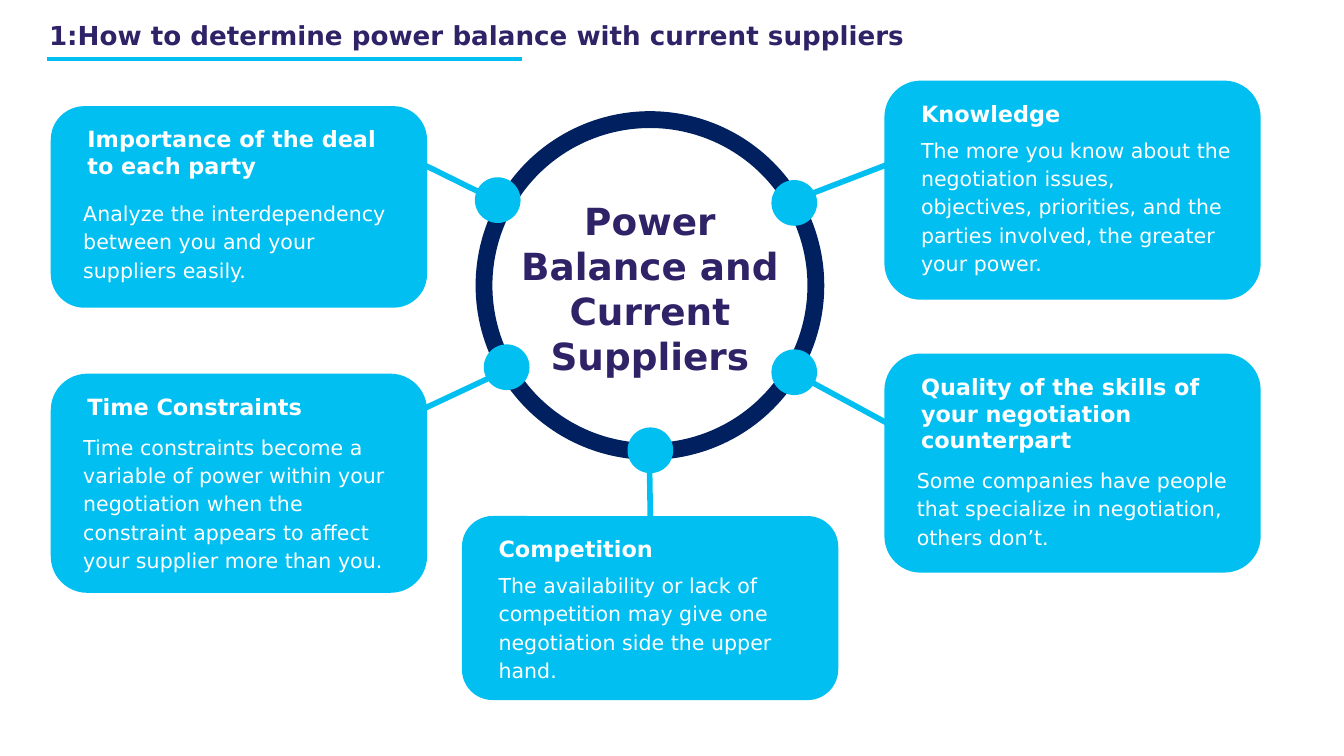
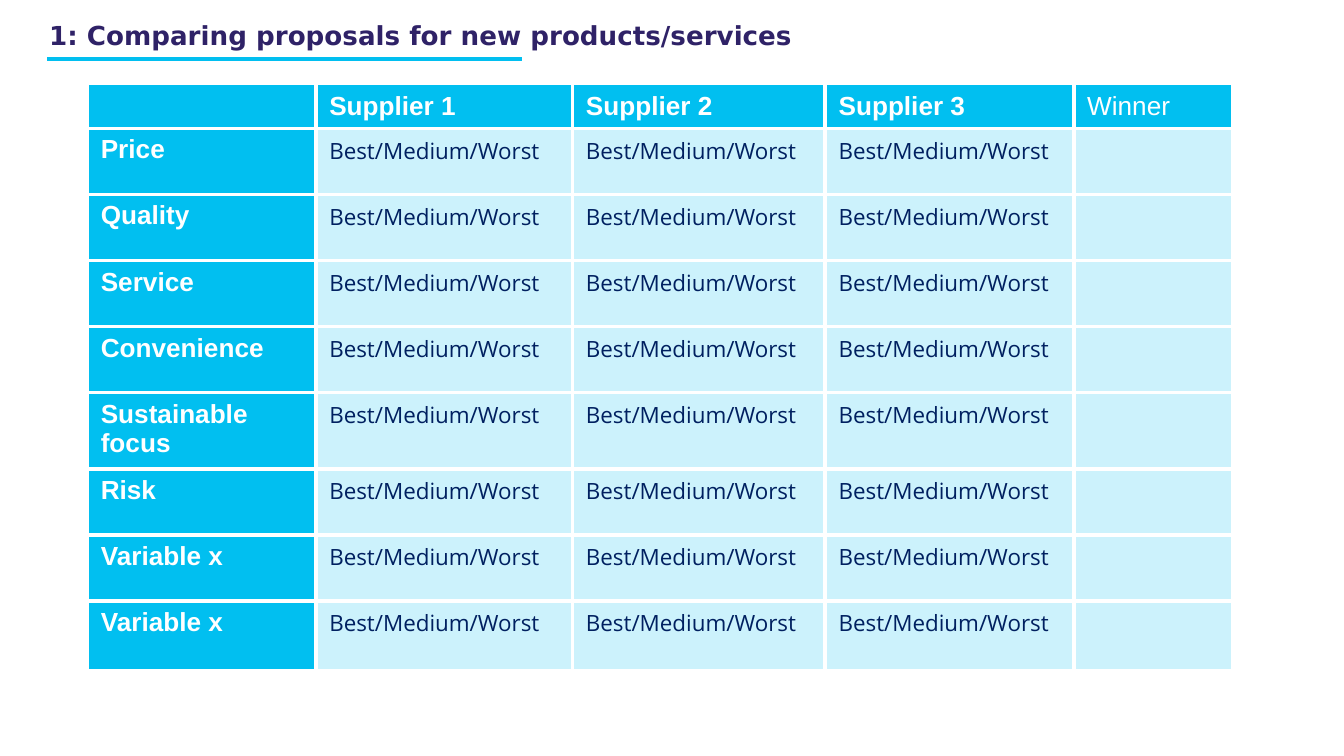
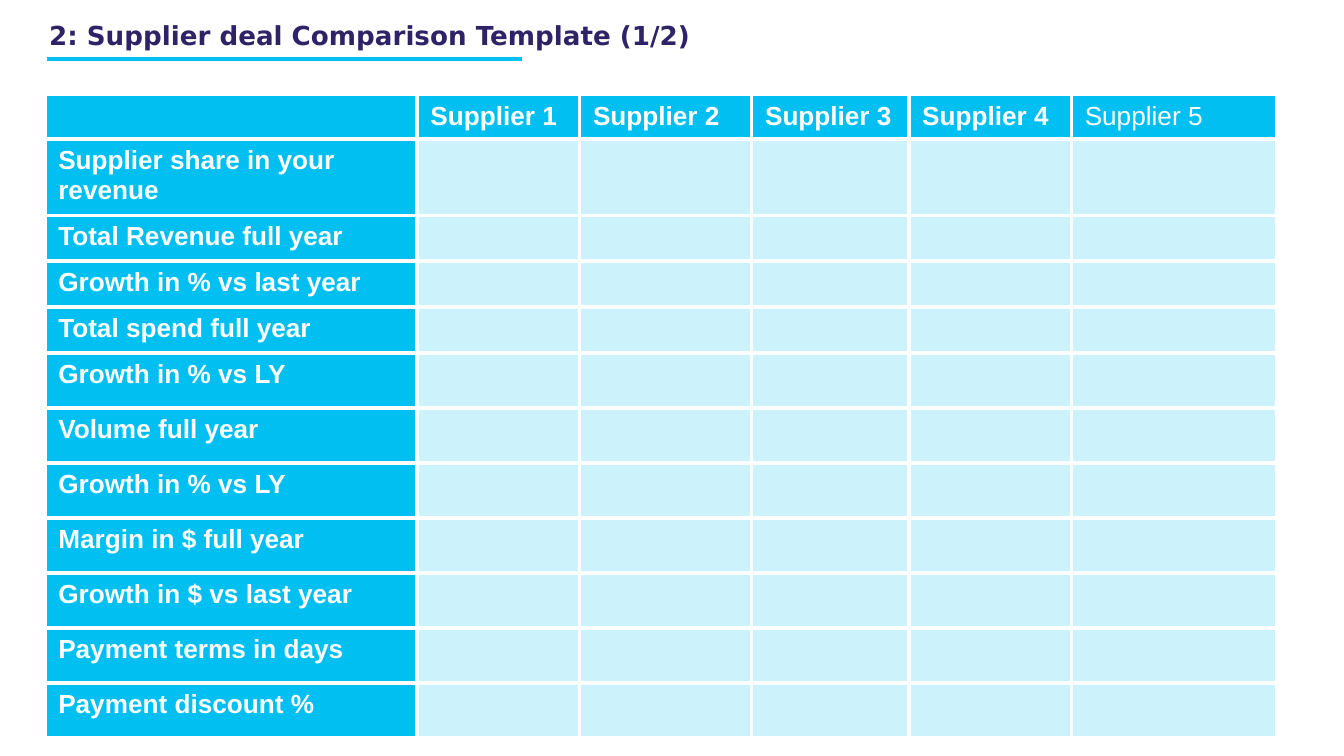
from lxml import etree
from pptx import Presentation
from pptx.dml.color import RGBColor
from pptx.enum.shapes import MSO_CONNECTOR, MSO_SHAPE
from pptx.enum.text import MSO_ANCHOR, MSO_AUTO_SIZE, PP_ALIGN
from pptx.oxml.ns import qn
from pptx.util import Pt

OVAL, ROUND = MSO_SHAPE.OVAL, MSO_SHAPE.ROUNDED_RECTANGLE
STRAIGHT = MSO_CONNECTOR.STRAIGHT
MIDDLE, TOP = MSO_ANCHOR.MIDDLE, MSO_ANCHOR.TOP
LEFT, CENTER = PP_ALIGN.LEFT, PP_ALIGN.CENTER
GROW = MSO_AUTO_SIZE.SHAPE_TO_FIT_TEXT

COLORS = {"cyan": "01BFF0", "pale": "CCF2FC", "navy": "002060",
          "plum": "2F2267", "white": "FFFFFF"}
MAIN, HEAD, CELL = "DejaVu Sans", "Arial", "Open Sans"
BOX_W, DOT = 201.6, 24.5
RATING = "Best/Medium/Worst"

TOPICS = [
    {"head": "Knowledge",
     "body": "The more you know about the negotiation issues, objectives, "
             "priorities, and the parties involved, the greater your power.",
     "box": (473.8, 43.2, 117.4), "sizes": (20, 80), "text": (14.2, 25.9),
     "dot": (413.3, 96.5), "line": (421.9, 108.7, 481.7, 85.7)},
    {"head": "Quality of the skills of your negotiation counterpart",
     "body": "Some companies have people that specialize in negotiation, others don’t.",
     "box": (473.8, 189.4, 117.4), "sizes": (49, 50), "text": (12, 56.8),
     "dot": (413.3, 187.2), "line": (427.7, 200.9, 479.5, 229)},
    {"head": "Competition",
     "body": "The availability or lack of competition may give one "
             "negotiation side the upper hand.",
     "box": (247.5, 276.5, 98.6), "sizes": (20, 65), "text": (14.2, 25.9),
     "dot": (336.2, 229), "line": (347.8, 239, 348.5, 283.7)},
    {"head": "Time Constraints",
     "body": "Time constraints become a variable of power within your negotiation "
             "when the constraint appears to affect your supplier more than you.",
     "box": (27.2, 200.2, 117.4), "sizes": (20, 80), "text": (12, 28),
     "dot": (259.2, 184.5), "line": (279.4, 194.4, 208.8, 227.5)},
    {"head": "Importance of the deal to each party",
     "body": "Analyze the interdependency between you and your suppliers easily.",
     "box": (27.2, 56.9, 108), "sizes": (34, 50), "text": (12, 46.1),
     "dot": (254.4, 95), "line": (267.1, 108, 214.6, 82.1)},
]

FACTORS = ["Price", "Quality", "Service", "Convenience", "Sustainable focus",
           "Risk", "Variable x", "Variable x"]
TERMS = ["Supplier share in your revenue", "Total Revenue full year",
         "Growth in % vs last year", "Total spend full year", "Growth in % vs LY",
         "Volume full year", "Growth in % vs LY", "Margin in $ full year",
         "Growth in $ vs last year", "Payment terms in days", "Payment discount %"]


def color(name):
    return RGBColor.from_string(COLORS[name])


class Deck:
    def __init__(self):
        self.prs = Presentation()
        self.prs.slide_width, self.prs.slide_height = Pt(720), Pt(405)
        self.slide = None

    def page(self, title, width):
        self.slide = self.prs.slides.add_slide(self.prs.slide_layouts[6])
        self.text(title, 20.9, 7.9, width, 22.3, 14, "plum", True)
        self.line(25.2, 31.7, 279.4, 31.7, 2)

    def run(self, para, words, size, tone, bold, font):
        run = para.add_run()
        run.text = words
        run.font.size, run.font.bold, run.font.name = Pt(size), bold, font
        run.font.color.rgb = color(tone)

    def text(self, words, x, y, w, h, size, tone, bold=False, align=LEFT, space=None):
        box = self.slide.shapes.add_textbox(Pt(x), Pt(y), Pt(w), Pt(h))
        frame = box.text_frame
        frame.word_wrap, frame.auto_size = True, GROW
        frame.margin_left = frame.margin_right = Pt(5.4)
        frame.margin_top = frame.margin_bottom = Pt(2.7)
        para = frame.paragraphs[0]
        para.alignment, para.line_spacing = align, space
        self.run(para, words, size, tone, bold, MAIN)

    def line(self, x1, y1, x2, y2, width):
        line = self.slide.shapes.add_connector(STRAIGHT, Pt(x1), Pt(y1), Pt(x2), Pt(y2))
        line.line.color.rgb, line.line.width = color("cyan"), Pt(width)
        etree.SubElement(line._element.spPr, qn("a:effectLst"))

    def shape(self, kind, x, y, w, h, fill="cyan", edge=None):
        shape = self.slide.shapes.add_shape(kind, Pt(x), Pt(y), Pt(w), Pt(h))
        shape.shadow.inherit = False
        shape.fill.solid()
        shape.fill.fore_color.rgb = color(fill)
        if edge:
            shape.line.color.rgb, shape.line.width = color(edge), Pt(9)
        else:
            shape.line.fill.background()

    def topic(self, item):
        x, y, h = item["box"]
        head, body = item["sizes"]
        dx, dy = item["text"]
        self.shape(OVAL, *item["dot"], DOT, DOT)
        self.shape(ROUND, x, y, BOX_W, h)
        self.text(item["head"], x + 14.2, y + 7.6, 173.5, head, 12, "white", True)
        self.text(item["body"], x + dx, y + dy, 177.8, body, 11, "white", space=1.15)
        self.line(*item["line"], 3)

    def cell(self, cell, words, fill, size, tone, bold, font, anchor):
        props = cell._tc.get_or_add_tcPr()
        for side in ("lnL", "lnR", "lnT", "lnB"):
            edge = etree.SubElement(props, qn(f"a:{side}"), w=str(Pt(2.25)))
            paint = etree.SubElement(edge, qn("a:solidFill"))
            etree.SubElement(paint, qn("a:srgbClr"), val=COLORS["white"])
        cell.fill.solid()
        cell.fill.fore_color.rgb = color(fill)
        cell.vertical_anchor = anchor
        para = cell.text_frame.paragraphs[0]
        if words:
            self.run(para, words, size, tone, bold, font)
        else:
            para._p.get_or_add_endParaRPr().set("sz", "1000")

    def table(self, x, y, cols, rows, data):
        frame = self.slide.shapes.add_table(len(rows), len(cols), Pt(x), Pt(y),
                                            Pt(sum(cols)), Pt(sum(rows)))
        table = frame.table
        table.first_row = table.horz_banding = False
        for col, width in zip(table.columns, cols):
            col.width = Pt(width)
        for row, height in zip(table.rows, rows):
            row.height = Pt(height)
        last = len(cols) - 1
        for r, line in enumerate(data):
            for c, words in enumerate(line):
                if r == 0 or c == 0:
                    style = ("cyan", 14, "white", c < last, HEAD)
                else:
                    style = ("pale", 12, "navy", False, CELL)
                self.cell(table.cell(r, c), words, *style, TOP if r else MIDDLE)


def main():
    deck = Deck()

    deck.page("1:How to determine power balance with current suppliers", 584)
    deck.shape(OVAL, 259.3, 64.1, 177.8, 177.8, "white", "navy")
    for item in TOPICS:
        deck.topic(item)
    deck.text("Power Balance and Current Suppliers", 272.2, 103.7, 152, 102.2,
              20, "plum", True, CENTER)

    deck.page("1: Comparing proposals for new products/services", 453)
    top = ["", "Supplier 1", "Supplier 2", "Supplier 3", "Winner"]
    deck.table(46.8, 44.8, [122.4, 137.5, 135.4, 133.2, 85],
               [21.6] + [35.4] * 7 + [37.4],
               [top] + [[name] + [RATING] * 3 + [""] for name in FACTORS])

    deck.page("2: Supplier deal Comparison Template (1/2)", 453)
    top = [""] + [f"Supplier {n}" for n in range(1, 6)]
    deck.table(24, 50.5, [199.4, 87.1, 92.2, 84.2, 87.1, 110.2],
               [20.9] + [24.6] * 4 + [29.5] * 7,
               [top] + [[name] + [""] * 5 for name in TERMS])

    deck.prs.save("out.pptx")


if __name__ == "__main__":
    main()
